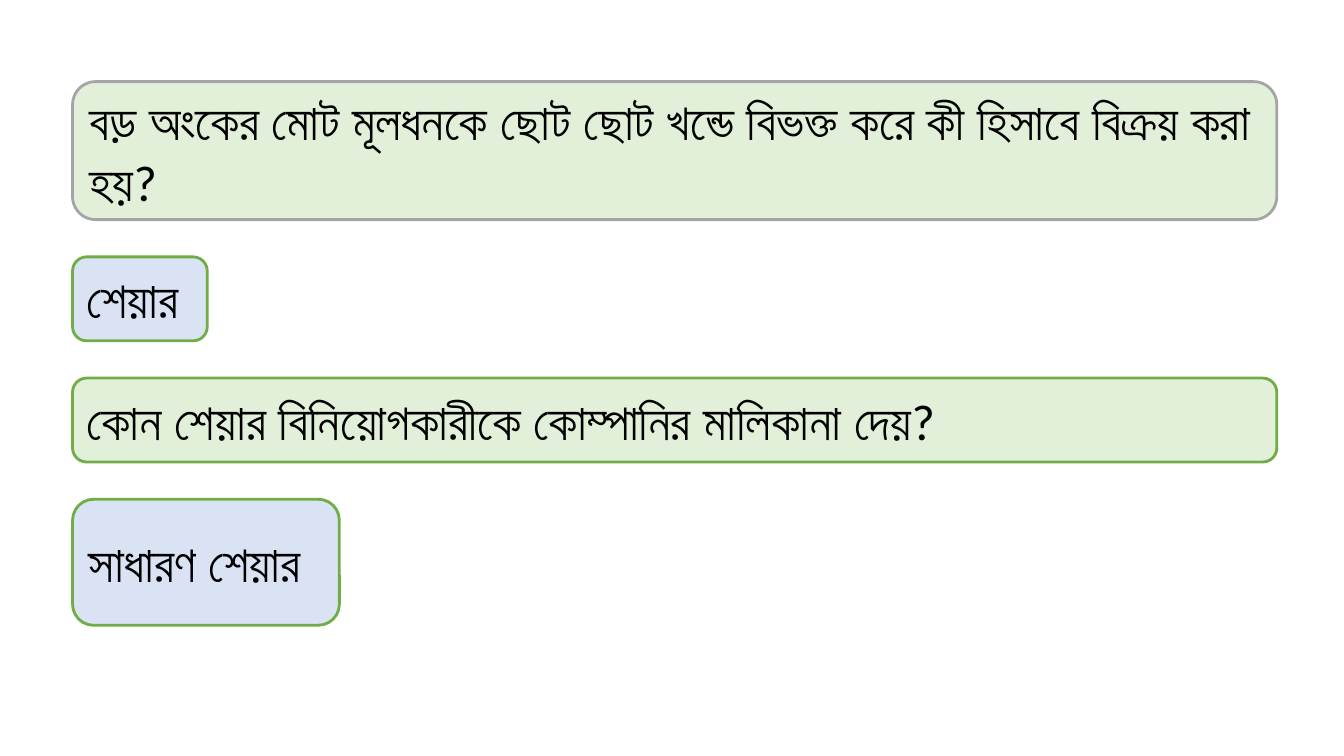
from dataclasses import dataclass

from pptx import Presentation
from pptx.dml.color import RGBColor
from pptx.enum.shapes import MSO_SHAPE
from pptx.enum.text import MSO_ANCHOR, PP_ALIGN
from pptx.util import Inches, Pt

ROUNDED = MSO_SHAPE.ROUNDED_RECTANGLE
MIDDLE = MSO_ANCHOR.MIDDLE
LEFT = PP_ALIGN.LEFT

SLIDE_WIDTH = Inches(13.33)
SLIDE_HEIGHT = Inches(7.5)

MARGIN_LEFT = 5.4
FIRST_TOP = 10.8
GAP = 4.93
FULL_WIDTH = 89.6
LINE_HEIGHT = 11.1

NUKTA = chr(0x09BC)
SINGLE_LETTERS = {
    chr(0x09A1) + NUKTA: chr(0x09DC),
    chr(0x09AF) + NUKTA: chr(0x09DF),
}


@dataclass(frozen=True)
class Theme:
    question_fill: RGBColor = RGBColor(0xE2, 0xF0, 0xD9)
    answer_fill: RGBColor = RGBColor(0xDA, 0xE3, 0xF3)
    gray_border: RGBColor = RGBColor(0xA5, 0xA5, 0xA5)
    green_border: RGBColor = RGBColor(0x70, 0xAD, 0x47)
    ink: RGBColor = RGBColor(0x00, 0x00, 0x00)
    font: str = "Calibri"
    text_size: Pt = Pt(36)
    border_width: Pt = Pt(2)


THEME = Theme()

QUIZ = [
    ("বড় অংকের মোট মূলধনকে ছোট ছোট খন্ডে বিভক্ত করে কী হিসাবে বিক্রয় করা হয়?",
     FULL_WIDTH, 18.25, THEME.question_fill, THEME.gray_border),
    ("শেয়ার",
     10.02, LINE_HEIGHT, THEME.answer_fill, THEME.green_border),
    ("কোন শেয়ার বিনিয়োগকারীকে কোম্পানির মালিকানা দেয়?",
     FULL_WIDTH, LINE_HEIGHT, THEME.question_fill, THEME.green_border),
    ("সাধারণ শেয়ার",
     19.85, 16.67, THEME.answer_fill, THEME.green_border),
]


def across(percent):
    return round(SLIDE_WIDTH * percent / 100)


def down(percent):
    return round(SLIDE_HEIGHT * percent / 100)


def join_nukta(wording):
    for pair, letter in SINGLE_LETTERS.items():
        wording = wording.replace(pair, letter)
    return wording


def write_text(card, wording):
    frame = card.text_frame
    frame.word_wrap = True
    frame.vertical_anchor = MIDDLE
    paragraph = frame.paragraphs[0]
    paragraph.alignment = LEFT
    run = paragraph.add_run()
    run.text = join_nukta(wording)
    run.font.name = THEME.font
    run.font.size = THEME.text_size
    run.font.color.rgb = THEME.ink


def add_card(slide, top, wording, width, height, fill, border):
    card = slide.shapes.add_shape(
        ROUNDED, across(MARGIN_LEFT), down(top), across(width), down(height))
    card.shadow.inherit = False
    card.fill.solid()
    card.fill.fore_color.rgb = fill
    card.line.color.rgb = border
    card.line.width = THEME.border_width
    write_text(card, wording)


def main():
    deck = Presentation()
    deck.slide_width = SLIDE_WIDTH
    deck.slide_height = SLIDE_HEIGHT
    slide = deck.slides.add_slide(deck.slide_layouts[6])

    top = FIRST_TOP
    for wording, width, height, fill, border in QUIZ:
        add_card(slide, top, wording, width, height, fill, border)
        top += height + GAP

    deck.save("out.pptx")


if __name__ == "__main__":
    main()
